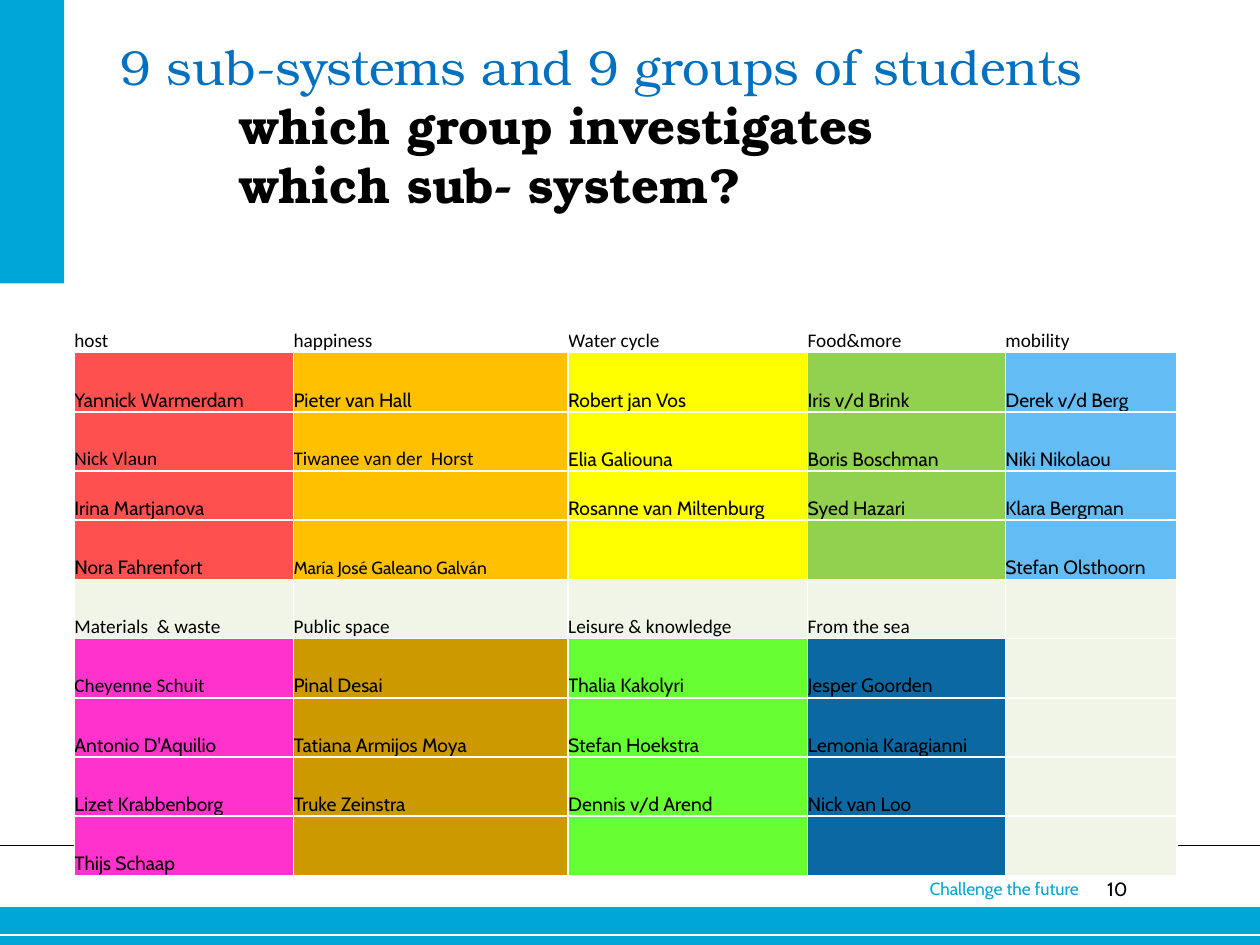
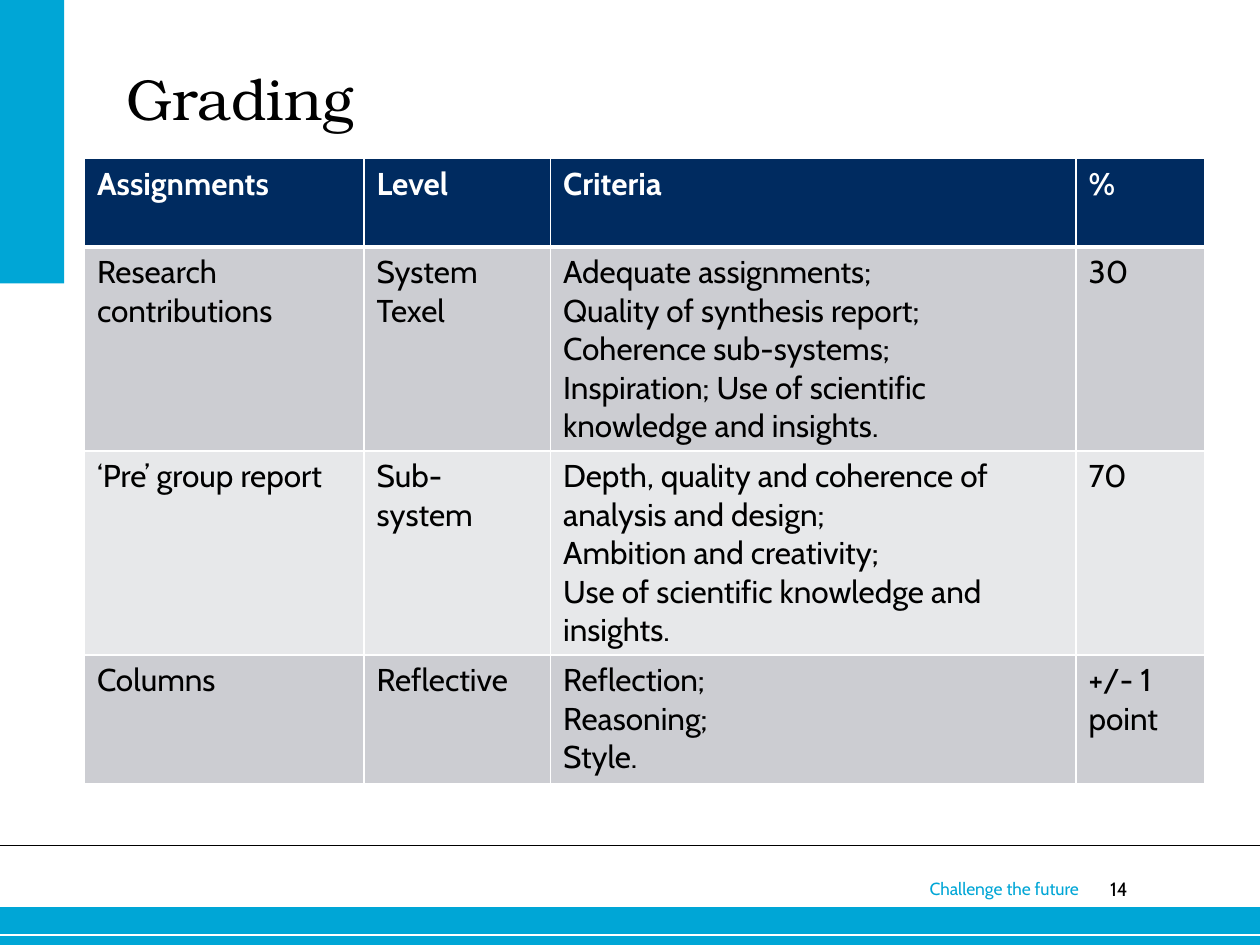
from dataclasses import dataclass
from typing import Optional

from lxml import etree
from pptx import Presentation
from pptx.dml.color import RGBColor
from pptx.enum import shapes, text
from pptx.oxml import ns
from pptx.util import Inches, Pt

# Colours
CYAN = RGBColor(0x00, 0xA6, 0xD6)
BLUE = RGBColor(0x00, 0x70, 0xC0)
NAVY = RGBColor(0x00, 0x2B, 0x60)
BLACK = RGBColor(0x00, 0x00, 0x00)
WHITE = RGBColor(0xFF, 0xFF, 0xFF)
RED = RGBColor(0xFF, 0x50, 0x50)
ORANGE = RGBColor(0xFF, 0xC0, 0x00)
YELLOW = RGBColor(0xFF, 0xFF, 0x00)
GREEN = RGBColor(0x92, 0xD0, 0x50)
SKY = RGBColor(0x64, 0xBC, 0xF4)
PINK = RGBColor(0xFF, 0x33, 0xCC)
OCHRE = RGBColor(0xCC, 0x99, 0x00)
LIME = RGBColor(0x66, 0xFF, 0x33)
OCEAN = RGBColor(0x0C, 0x68, 0xA3)
IVORY = RGBColor(0xF1, 0xF5, 0xE7)
GREY = RGBColor(0xCC, 0xCD, 0xD2)
PALE = RGBColor(0xE7, 0xE8, 0xEA)

# Fonts
BODY, PLAIN, HEADING = "Cabin", "Calibri", "TeX Gyre Bonum"
HANGING = Inches(0.94)


@dataclass
class Band:
    left: float
    top: float
    width: float
    height: float


@dataclass
class Rule:
    y: float
    color: RGBColor
    weight: float


@dataclass
class TitleLine:
    text: str
    size: float
    color: RGBColor = BLACK
    bold: bool = False
    first_indent: int = 0


@dataclass
class CellStyle:
    fill: Optional[RGBColor]
    font: str = BODY
    size: float = 18
    color: RGBColor = BLACK
    bold: bool = False
    tight: bool = False
    bottom: float = 1
    top: float = 1


BANDS = [Band(0, 7.2, 10, 0.3), Band(0, 0, 0.51, 2.25)]
RULES = [Rule(7.42, WHITE, 0.75), Rule(6.71, BLACK, 1)]

# Sub-systems: each block is a heading row and its group members
SUBSYSTEM_ROWS = [
    ["host", "happiness", "Water cycle", "Food&more", "mobility"],
    ["Yannick Warmerdam", "Pieter van Hall", "Robert jan Vos", "Iris v/d Brink", "Derek v/d Berg"],
    ["Nick Vlaun", "Tiwanee van der  Horst", "Elia Galiouna", "Boris Boschman", "Niki Nikolaou"],
    ["Irina Martjanova", "", "Rosanne van Miltenburg", "Syed Hazari", "Klara Bergman"],
    ["Nora Fahrenfort", "María José Galeano Galván", "", "", "Stefan Olsthoorn"],
    ["Materials  & waste", "Public space", "Leisure & knowledge", "From the sea", ""],
    ["Cheyenne Schuit", "Pinal Desai", "Thalia Kakolyri", "Jesper Goorden", ""],
    ["Antonio D'Aquilio", "Tatiana Armijos Moya", "Stefan Hoekstra", "Lemonia Karagianni", ""],
    ["Lizet Krabbenborg", "Truke Zeinstra", "Dennis v/d Arend", "Nick van Loo", ""],
    ["Thijs Schaap", "", "", "", ""],
]
HEADING_ROWS = {0: None, 5: IVORY}
UPPER_FILLS = [RED, ORANGE, YELLOW, GREEN, SKY]
LOWER_FILLS = [PINK, OCHRE, LIME, OCEAN, IVORY]
PLAIN_NAMES = {"Nick Vlaun", "Tiwanee van der  Horst", "Cheyenne Schuit"}
SMALL_NAME = "María José Galeano Galván"

GRADING_ROWS = [
    ["Assignments", "Level", "Criteria", "%"],
    ["Research contributions", "System Texel",
     "Adequate assignments;\nQuality of synthesis report;\nCoherence sub-systems;\n"
     "Inspiration; Use of scientific knowledge and insights.", "30"],
    ["‘Pre’ group report", "Sub-system",
     "Depth, quality and coherence of analysis and design;\nAmbition and creativity;\n"
     "Use of scientific knowledge and insights.", "70"],
    ["Columns", "Reflective", "Reflection;\nReasoning;\nStyle.", "+/- 1 point"],
]


def set_all(target, values: dict) -> None:
    for name, value in values.items():
        setattr(target, name, value)


def format_font(font, name: str, size: float, color: RGBColor, bold: bool = False) -> None:
    set_all(font, {"name": name, "size": Pt(size), "bold": bold})
    font.color.rgb = color


def no_margins(target) -> None:
    set_all(target, {f"margin_{side}": 0 for side in ("left", "top", "right", "bottom")})


# Shared frame
def add_rule(slide, rule: Rule) -> None:
    y = Inches(rule.y)
    line = slide.shapes.add_connector(shapes.MSO_CONNECTOR.STRAIGHT, 0, y, Inches(10), y)
    line.line.color.rgb = rule.color
    line.line.width = Pt(rule.weight)
    etree.SubElement(line._element.spPr, ns.qn("a:effectLst"))


def add_label(slide, label: str, box: Band, size: float, color: RGBColor):
    sp = slide.shapes.add_textbox(*map(Inches, (box.left, box.top, box.width, box.height)))
    tf = sp.text_frame
    tf.word_wrap = True
    r = tf.paragraphs[0].add_run()
    r.text = label
    format_font(r.font, BODY, size, color)
    return tf


def add_frame(slide, number: int) -> None:
    for band in BANDS:
        sp = slide.shapes.add_shape(
            shapes.MSO_SHAPE.RECTANGLE,
            *map(Inches, (band.left, band.top, band.width, band.height)))
        sp.shadow.inherit = False
        sp.fill.solid()
        sp.fill.fore_color.rgb = CYAN
        sp.line.fill.background()
    for rule in RULES:
        add_rule(slide, rule)
    tf = add_label(slide, str(number), Band(8.46, 6.96, 0.49, 0.28), 11, BLACK)
    no_margins(tf)
    tf.paragraphs[0].alignment = text.PP_ALIGN.RIGHT
    add_label(slide, "Challenge the future", Band(7.28, 6.92, 1.6, 0.27), 10, CYAN)


def set_title(slide, box: Band, lines: list[TitleLine]) -> None:
    sp = slide.shapes.title
    set_all(sp, {"left": Inches(box.left), "top": Inches(box.top),
                 "width": Inches(box.width), "height": Inches(box.height)})
    tf = sp.text_frame
    no_margins(tf)
    set_all(tf, {"word_wrap": True, "auto_size": text.MSO_AUTO_SIZE.NONE,
                 "vertical_anchor": text.MSO_ANCHOR.TOP})
    for i, line in enumerate(lines):
        p = tf.add_paragraph() if i else tf.paragraphs[0]
        p.alignment = text.PP_ALIGN.LEFT
        pPr = p._p.get_or_add_pPr()
        pPr.set("marL", str(HANGING))
        pPr.set("indent", str(line.first_indent))
        r = p.add_run()
        r.text = line.text
        format_font(r.font, HEADING, line.size, line.color, line.bold)


# Tables
def set_borders(cell, top: float, bottom: float) -> None:
    tcPr = cell._tc.get_or_add_tcPr()
    weights = {"lnL": 1, "lnR": 1, "lnT": top, "lnB": bottom}
    for i, (tag, weight) in enumerate(weights.items()):
        ln = etree.Element(ns.qn(f"a:{tag}"), w=str(Pt(weight)))
        fill = etree.SubElement(ln, ns.qn("a:solidFill"))
        etree.SubElement(fill, ns.qn("a:srgbClr"), val=str(WHITE))
        tcPr.insert(i, ln)


def fill_cell(cell, content: str, style: CellStyle) -> None:
    if style.fill is None:
        cell.fill.background()
    else:
        cell.fill.solid()
        cell.fill.fore_color.rgb = style.fill
    if style.tight:
        no_margins(cell)
        cell.vertical_anchor = text.MSO_ANCHOR.BOTTOM
    set_borders(cell, style.top, style.bottom)
    if content:
        cell.text = content
        for p in cell.text_frame.paragraphs:
            format_font(p.runs[0].font, style.font, style.size, style.color, style.bold)


def add_grid(slide, left: float, top: float, widths: list[float], heights: list[float],
             rows: list[list[str]], style_of) -> None:
    frame = slide.shapes.add_table(len(rows), len(widths), Inches(left), Inches(top),
                                   Inches(sum(widths)), Inches(sum(heights)))
    table = frame.table
    set_all(table, {"first_row": False, "horz_banding": False})
    for column, width in zip(table.columns, widths):
        column.width = Inches(width)
    for row, height in zip(table.rows, heights):
        row.height = Inches(height)
    for i, row in enumerate(rows):
        for j, content in enumerate(row):
            fill_cell(table.cell(i, j), content, style_of(i, j, content))


def subsystem_style(row: int, col: int, content: str) -> CellStyle:
    if row in HEADING_ROWS:
        return CellStyle(HEADING_ROWS[row], PLAIN, 11, tight=True)
    fills = UPPER_FILLS if row < 5 else LOWER_FILLS
    font = PLAIN if content in PLAIN_NAMES else BODY
    return CellStyle(fills[col], font, 10 if content == SMALL_NAME else 11, tight=True)


def grading_style(row: int, col: int, content: str) -> CellStyle:
    if row == 0:
        return CellStyle(NAVY, color=WHITE, bold=True, bottom=3)
    return CellStyle(GREY if row % 2 else PALE, top=3 if row == 1 else 1)


def new_slide(prs, number: int):
    slide = prs.slides.add_slide(prs.slide_layouts[5])
    add_frame(slide, number)
    return slide


def main() -> None:
    prs = Presentation()
    prs.slide_width, prs.slide_height = Inches(10), Inches(7.5)

    # Groups per sub-system
    s = new_slide(prs, 10)
    set_title(s, Band(0.96, 0.29, 8.64, 1.36), [
        TitleLine("9 sub-systems and 9 groups of students", 28, BLUE, first_indent=-HANGING),
        TitleLine("which group investigates", 28, bold=True),
        TitleLine("which sub- system?", 28, bold=True),
    ])
    heights = [0.39 if i == 3 else 0.47 for i in range(len(SUBSYSTEM_ROWS))]
    add_grid(s, 0.59, 2.33, [1.74, 2.18, 1.9, 1.57, 1.36], heights,
             SUBSYSTEM_ROWS, subsystem_style)

    # Grading
    s = new_slide(prs, 14)
    set_title(s, Band(1, 0.5, 7.83, 1.36), [TitleLine("Grading", 33, first_indent=-HANGING)])
    add_grid(s, 0.67, 1.26, [2.22, 1.48, 4.17, 1.02], [0.7, 1.62, 1.62, 1.02],
             GRADING_ROWS, grading_style)

    prs.save("out.pptx")


if __name__ == "__main__":
    main()
